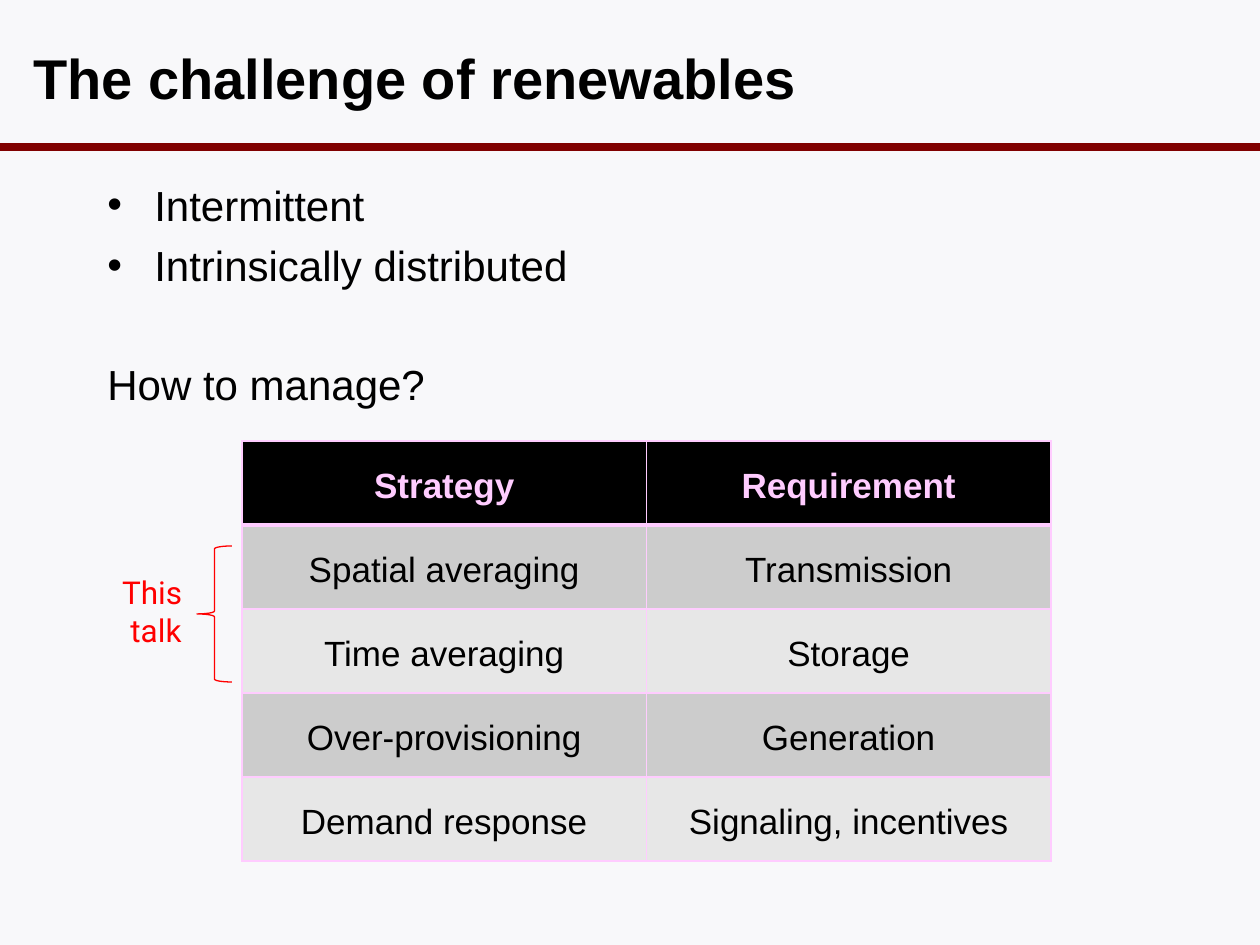
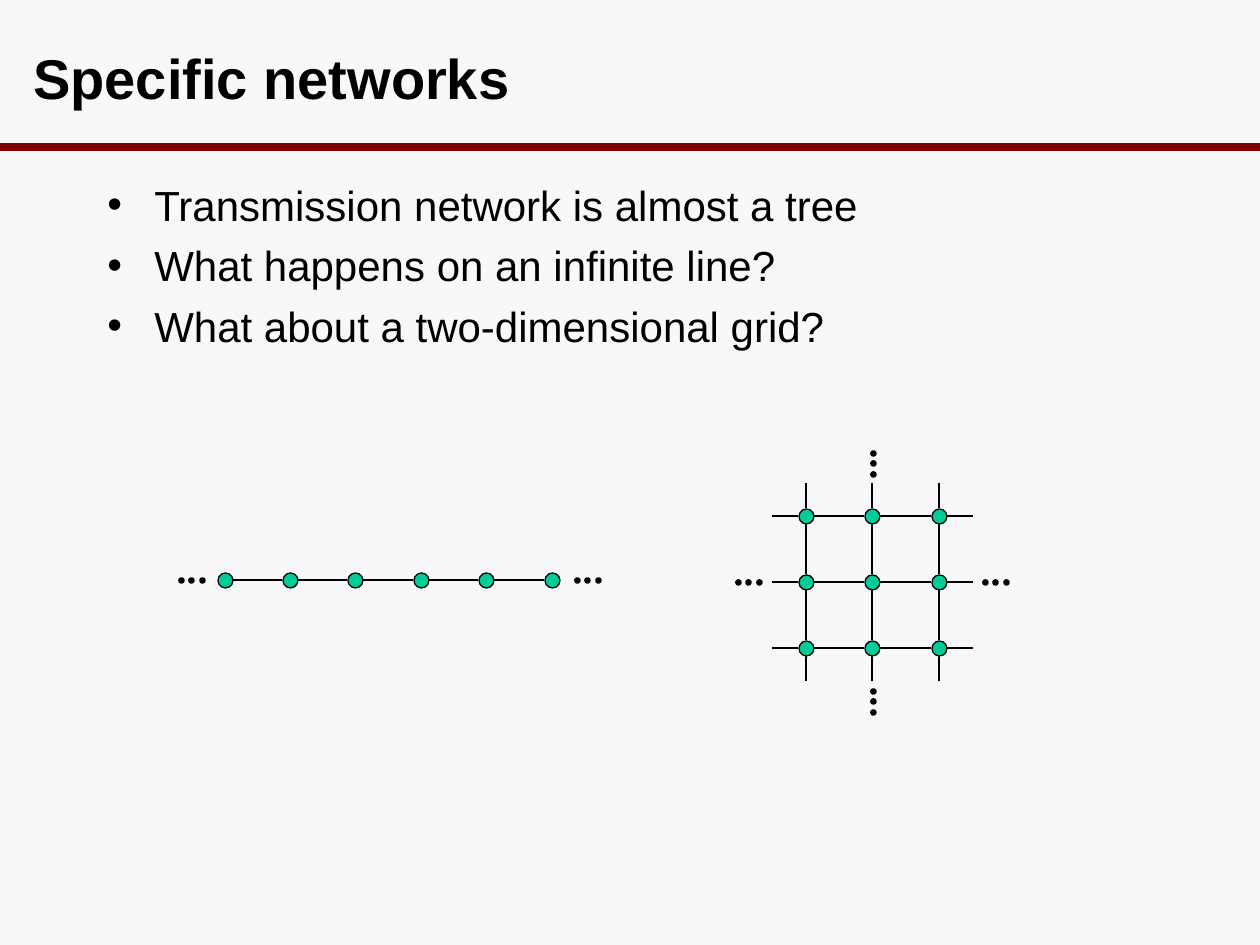
import dataclasses

import lxml.etree
import pptx
import pptx.dml.color
import pptx.enum.shapes
import pptx.enum.text
import pptx.oxml.ns
import pptx.util

SHAPE = pptx.enum.shapes.MSO_SHAPE
ALIGN = pptx.enum.text.PP_ALIGN
ANCHOR = pptx.enum.text.MSO_ANCHOR
EMU = 914400 / 126  # one px


@dataclasses.dataclass(frozen=True)
class Theme:
    back: str = "F8F8FA"
    ink: str = "000000"
    rule: str = "800000"
    node: str = "00CC99"
    pink: str = "FFCCFF"
    note: str = "FF0000"
    bands: tuple = ("CCCCCC", "E7E7E7")
    font: str = "Arial"
    hand: str = "Roboto"
    title: int = 32
    body: int = 24
    cell: int = 20
    small: int = 18
    gap: float = 5.8   # points before a line
    skip: float = 39.2  # points before a new block


THEME = Theme()


def px(num):
    return pptx.util.Emu(round(num * EMU))


def box(*nums):
    return [px(num) for num in nums]


def tint(name):
    return pptx.dml.color.RGBColor.from_string(name)


def paint(fill, name):
    fill.solid()
    fill.fore_color.rgb = tint(name)


def style(para, size, color=THEME.ink, bold=False, font=THEME.font):
    para.font.name = font
    para.font.size = pptx.util.Pt(size)
    para.font.bold = bold
    para.font.color.rgb = tint(color)


def child(parent, tag, **attrs):
    return lxml.etree.SubElement(parent, pptx.oxml.ns.qn(tag), attrs)


# Shared frame: background, title and rule
def start(deck, title):
    slide = deck.slides.add_slide(deck.slide_layouts[6])
    paint(slide.background.fill, THEME.back)
    link(slide.shapes, (0, 147), (1260, 147), THEME.rule, 4.5)
    frame = slide.shapes.add_textbox(*box(21, 21, 1071, 105)).text_frame
    frame.word_wrap = True
    frame.vertical_anchor = ANCHOR.MIDDLE
    frame.margin_top = px(14)
    frame.text = title
    style(frame.paragraphs[0], THEME.title, bold=True)
    return slide


def link(shapes, head, tail, color=THEME.ink, width=0.75):
    line = shapes.add_connector(
        pptx.enum.shapes.MSO_CONNECTOR.STRAIGHT, *box(*head, *tail))
    line.line.color.rgb = tint(color)
    line.line.width = pptx.util.Pt(width)
    child(line._element.spPr, "a:effectLst")


# Body text: bullets, then an optional plain line
def body(slide, points, ask=None):
    frame = slide.shapes.add_textbox(*box(95, 168, 1071, 725)).text_frame
    frame.word_wrap = True
    frame.margin_top = px(11)
    frame.text = "\n".join(points + ([ask] if ask else []))
    for i, para in enumerate(frame.paragraphs):
        style(para, THEME.body)
        para.space_before = pptx.util.Pt(THEME.gap if i else 0)
        if i < len(points):
            props = para._p.get_or_add_pPr()
            props.set("marL", str(px(47)))
            props.set("indent", str(-px(47)))
            child(props, "a:buFont", typeface=THEME.font)
            child(props, "a:buChar", char="•")
        else:
            para.space_before = pptx.util.Pt(THEME.skip)


# Table
def edge(cell, side, width):
    line = child(cell._tc.get_or_add_tcPr(), "a:ln" + side,
                 w=str(pptx.util.Pt(width)))
    child(child(line, "a:solidFill"), "a:srgbClr", val=THEME.pink)


def table(slide, rows):
    place = box(242, 441, 809, 84 * len(rows))
    grid = slide.shapes.add_table(len(rows), len(rows[0]), *place).table
    for r, row in enumerate(rows):
        top = r == 0
        for c, text in enumerate(row):
            cell = grid.cell(r, c)
            cell.text = text
            for side in "LRTB":
                thick = (top and side == "B") or (r == 1 and side == "T")
                edge(cell, side, 3 if thick else 1)
            paint(cell.fill, THEME.ink if top else THEME.bands[(r - 1) % 2])
            para = cell.text_frame.paragraphs[0]
            para.alignment = ALIGN.CENTER
            para.line_spacing = 1.5
            style(para, THEME.cell, THEME.pink if top else THEME.ink, top)


# Brace with its label
def brace(slide):
    mark = slide.shapes.add_shape(SHAPE.LEFT_BRACE, *box(197, 546, 35, 136))
    mark.shadow.inherit = False
    mark.fill.background()
    mark.line.color.rgb = tint(THEME.note)
    mark.line.width = pptx.util.Pt(0.75)
    frame = slide.shapes.add_textbox(*box(105, 567, 102, 89)).text_frame
    frame.word_wrap = False
    frame.text = "This \ntalk"
    for para in frame.paragraphs:
        para.alignment = ALIGN.CENTER
        style(para, THEME.small, THEME.note, font=THEME.hand)


# Network parts
def disc(shapes, x, y, size, color, width):
    oval = shapes.add_shape(
        SHAPE.OVAL, *box(x - size // 2, y - size // 2, size, size))
    oval.shadow.inherit = False
    paint(oval.fill, color)
    oval.line.color.rgb = tint(THEME.ink)
    oval.line.width = pptx.util.Pt(width)


def node(shapes, x, y):
    disc(shapes, x, y, 15, THEME.node, 0.75)


def dots(shapes, x, y, down=False):
    for i in range(3):
        step = i * 21 // 2
        spot = (x, y + step) if down else (x + step, y)
        disc(shapes, *spot, 3, THEME.ink, 2)


def chain(shapes, stops, level, down=False, stub=0):
    """Link the stops on one row or column, leaving room for the nodes."""
    spans = [(a + 8, b - 8) for a, b in zip(stops, stops[1:])]
    if stub:
        spans += [(stops[0] - 8 - stub, stops[0] - 8),
                  (stops[-1] + 8, stops[-1] + 8 + stub)]
    for a, b in spans:
        if down:
            link(shapes, (level, a), (level, b))
        else:
            link(shapes, (a, level), (b, level))


def path_net(slide):
    shapes = slide.shapes.add_group_shape().shapes
    cols, y = [225 + i * 327 // 5 for i in range(6)], 580
    chain(shapes, cols, y)
    for x in cols:
        node(shapes, x, y)
    for x in (181, 577):
        dots(shapes, x, y)


def grid_net(slide):
    shapes = slide.shapes.add_group_shape().shapes
    cols = [806 + i * 133 // 2 for i in range(3)]
    rows = [516 + i * 66 for i in range(3)]
    for y in rows:
        chain(shapes, cols, y, stub=26)
    for x in cols:
        chain(shapes, rows, x, down=True, stub=25)
        for y in rows:
            node(shapes, x, y)
    for x in (738, 985):
        dots(shapes, x, rows[1])
    for y in (453, 691):
        dots(shapes, 873, y, down=True)


def main():
    deck = pptx.Presentation()
    deck.slide_width, deck.slide_height = box(1260, 945)

    # Slide 1: strategies
    slide = start(deck, "The challenge of renewables")
    body(slide, ["Intermittent", "Intrinsically distributed"],
         "How to manage?")
    table(slide, [
        ("Strategy", "Requirement"),
        ("Spatial averaging", "Transmission"),
        ("Time averaging", "Storage"),
        ("Over-provisioning", "Generation"),
        ("Demand response", "Signaling, incentives"),
    ])
    brace(slide)

    # Slide 2: line and grid
    slide = start(deck, "Specific networks")
    body(slide, ["Transmission network is almost a tree",
                 "What happens on an infinite line?",
                 "What about a two-dimensional grid?"])
    path_net(slide)
    grid_net(slide)

    deck.save("out.pptx")


if __name__ == "__main__":
    main()
